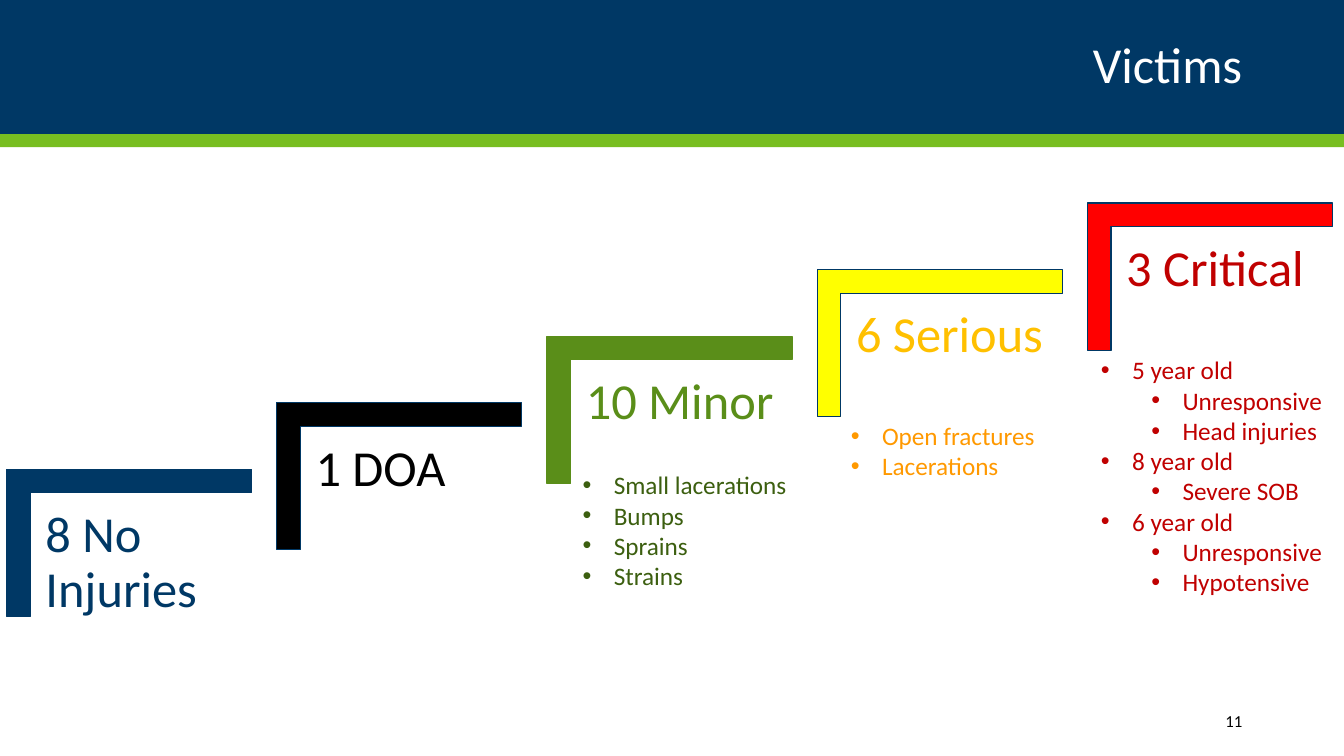
from lxml import etree
from pptx import Presentation
from pptx.dml.color import RGBColor
from pptx.enum import shapes, text
from pptx.oxml import ns
from pptx.util import Inches, Pt

NAVY = RGBColor(0x00, 0x38, 0x65)
LIME = RGBColor(0x78, 0xBE, 0x21)
GREEN = RGBColor(0x5A, 0x8E, 0x19)
DARK_GREEN = RGBColor(0x3C, 0x5F, 0x10)
YELLOW = RGBColor(0xFF, 0xFF, 0x00)
GOLD = RGBColor(0xFF, 0xC0, 0x00)
ORANGE = RGBColor(0xFF, 0x99, 0x00)
RED = RGBColor(0xFF, 0x00, 0x00)
DARK_RED = RGBColor(0xC0, 0x00, 0x00)
BLACK = RGBColor(0x00, 0x00, 0x00)
WHITE = RGBColor(0xFF, 0xFF, 0xFF)

deck = Presentation()
deck.slide_width, deck.slide_height = Inches(13.33), Inches(7.5)
page = deck.slides.add_slide(deck.slide_layouts[6])


def add_solid(kind, place, fill, outline=None):
    shape = page.shapes.add_shape(kind, *map(Inches, place))
    shape.shadow.inherit = False
    shape.fill.solid()
    shape.fill.fore_color.rgb = fill
    if outline is None:
        shape.line.fill.background()
    else:
        shape.line.color.rgb = outline
        shape.line.width = Pt(0.85)
    return shape


def add_words(place, lines, size, color, inset=None, bullets=False, **formats):
    """Write (level, wording) lines into one text box."""
    frame = page.shapes.add_textbox(*map(Inches, place)).text_frame
    frame.word_wrap = True
    if inset is not None:
        for side in ("left", "top", "right", "bottom"):
            setattr(frame, f"margin_{side}", Inches(inset))
    frame.vertical_anchor = formats.pop("anchor", text.MSO_ANCHOR.TOP)
    for index, (level, wording) in enumerate(lines):
        para = frame.paragraphs[0] if index == 0 else frame.add_paragraph()
        para.level = level
        for name, value in formats.items():
            setattr(para, name, value)
        span = para.add_run()
        span.text = wording
        for name, value in {"name": "Calibri", "size": Pt(size)}.items():
            setattr(span.font, name, value)
        span.font.color.rgb = color
        if bullets:
            props = para._p.get_or_add_pPr()
            props.set("marL", str(Inches(0.31 + 0.5 * level)))
            props.set("indent", str(Inches(-0.31)))
            etree.SubElement(props, ns.qn("a:buFont")).set("typeface", "Arial")
            etree.SubElement(props, ns.qn("a:buChar")).set("char", "•")


# Header band and title
add_solid(shapes.MSO_SHAPE.RECTANGLE, (0, 0, 13.33, 1.33), NAVY)
add_solid(shapes.MSO_SHAPE.RECTANGLE, (0, 1.33, 13.33, 0.13), LIME)
add_words((0.92, 0.17, 11.5, 1), [(0, "Victims")], 36, WHITE,
          anchor=text.MSO_ANCHOR.MIDDLE, alignment=text.PP_ALIGN.RIGHT,
          line_spacing=0.9)

# Staircase: wording, bracket fill, bracket outline, text colour
steps = [
    ("8 No Injuries", NAVY, NAVY, NAVY),
    ("1 DOA", BLACK, NAVY, BLACK),
    ("10 Minor", GREEN, GREEN, GREEN),
    ("6 Serious", YELLOW, NAVY, GOLD),
    ("3 Critical", RED, NAVY, DARK_RED),
]
STEP_RIGHT, STEP_UP = 2.68, 0.66
for index, (wording, fill, outline, color) in enumerate(steps):
    right, up = index * STEP_RIGHT, index * STEP_UP
    bracket = add_solid(shapes.MSO_SHAPE.CORNER,
                        (0.55 + right, 4.17 - up, 1.46, 2.43), fill, outline)
    bracket.rotation = 90
    for corner in range(2):
        bracket.adjustments[corner] = 0.16
    add_words((0.3 + right, 4.9 - up, 2.19, 1.92), [(0, wording)], 36, color,
              inset=0.15, line_spacing=0.9)

# Injury lists
injuries = [
    ((5.68, 4.61, 2.24, 1.31), DARK_GREEN,
     [(0, "Small lacerations"), (0, "Bumps"), (0, "Sprains"), (0, "Strains")]),
    ((8.34, 4.12, 2.24, 0.71), ORANGE,
     [(0, "Open fractures"), (0, "Lacerations")]),
    ((10.82, 3.47, 2.52, 2.52), DARK_RED,
     [(0, "5 year old"), (1, "Unresponsive"), (1, "Head injuries"),
      (0, "8 year old"), (1, "Severe SOB"),
      (0, "6 year old"), (1, "Unresponsive"), (1, "Hypotensive")]),
]
for place, color, lines in injuries:
    add_words(place, lines, 18, color, bullets=True)

# Slide number
add_words((10.82, 6.95, 1.6, 0.4), [(0, "11")], 12, BLACK,
          anchor=text.MSO_ANCHOR.MIDDLE, alignment=text.PP_ALIGN.RIGHT)

deck.save("out.pptx")
